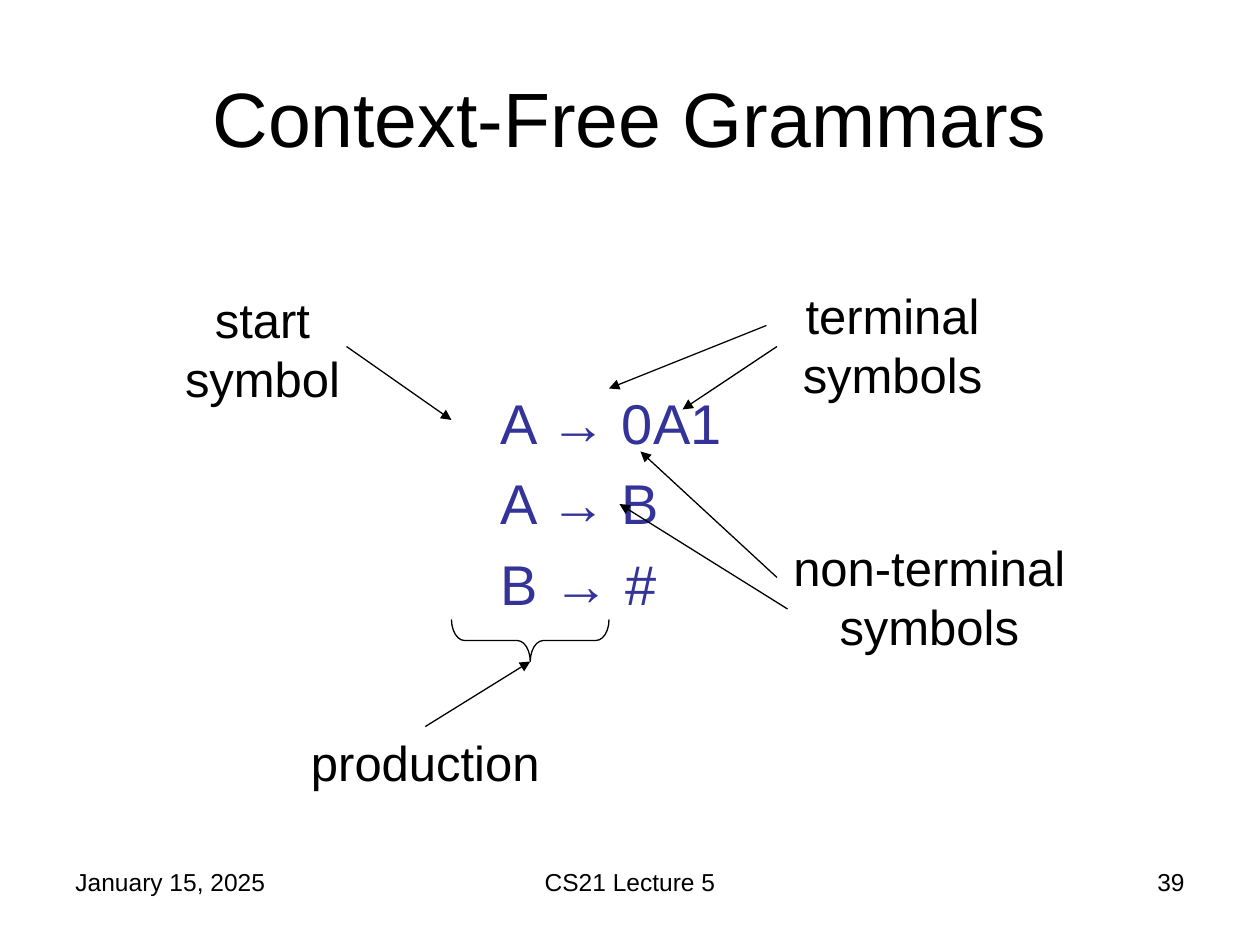
from dataclasses import dataclass

from lxml.etree import SubElement
from pptx import Presentation
from pptx.dml.color import RGBColor
from pptx.enum.shapes import MSO_CONNECTOR, MSO_SHAPE
from pptx.enum.text import MSO_ANCHOR, PP_ALIGN
from pptx.oxml.ns import qn
from pptx.util import Inches, Pt


@dataclass(frozen=True)
class Theme:
    """Colours, type sizes and line width of the slide."""
    font: str = "Arial"
    ink: str = "000000"
    rule: str = "333399"
    title: int = 44
    body: int = 32
    label: int = 28
    foot: int = 14
    line: float = 0.75


THEME = Theme()
WIDTH, HEIGHT = 10, 7.5
CELL = WIDTH / 120
LEFT, MID, RIGHT = PP_ALIGN.LEFT, PP_ALIGN.CENTER, PP_ALIGN.RIGHT

FOOTER = [
    ("January 15, 2025", 6, 28, LEFT),
    ("CS21 Lecture 5", 41, 38, MID),
    ("39", 86, 28, RIGHT),
]
LABELS = [
    ("start symbol", (15, 27, 20, 12.4)),
    ("terminal symbols", (75, 26.6, 20, 12.4)),
    ("non-terminal symbols", (73, 50.6, 31, 12.4)),
    ("production", (25, 69.2, 31, 6.8)),
]
ARROWS = [
    ((33, 33), (43, 40)),
    ((73, 31), (58, 37)),
    ((74, 33), (65, 39)),
    ((75, 58), (59, 48)),
    ((74, 55), (61, 43)),
    ((40.5, 69.2), (50.5, 63)),
]


def grid(*cells):
    """Turn grid columns and rows into slide lengths."""
    return [Inches(cell * CELL) for cell in cells]


def write(slide, lines, box, size, color=THEME.ink, align=MID,
          anchor=MSO_ANCHOR.TOP, before=0):
    """Add a text box with one paragraph per line."""
    frame = slide.shapes.add_textbox(*grid(*box)).text_frame
    frame.word_wrap = True
    frame.vertical_anchor = anchor
    for index, line in enumerate(lines):
        para = frame.paragraphs[0] if index == 0 else frame.add_paragraph()
        para.alignment = align
        para.space_before = Pt(before)
        run = para.add_run()
        run.text = line
        run.font.name = THEME.font
        run.font.size = Pt(size)
        run.font.color.rgb = RGBColor.from_string(color)


def stroke(shape):
    """Give a shape or connector the thin ink line."""
    shape.line.color.rgb = RGBColor.from_string(THEME.ink)
    shape.line.width = Pt(THEME.line)


def arrow(slide, start, end):
    """Draw a line with a triangle head at its end."""
    link = slide.shapes.add_connector(MSO_CONNECTOR.STRAIGHT, *grid(*start, *end))
    stroke(link)
    SubElement(link.line._get_or_add_ln(), qn("a:tailEnd"), type="triangle")
    SubElement(link._element.spPr, qn("a:effectLst"))


def brace(slide, box):
    """Draw a left brace turned to open upwards."""
    shape = slide.shapes.add_shape(MSO_SHAPE.LEFT_BRACE, *grid(*box))
    shape.rotation = 270
    shape.adjustments[0] = 0.31
    shape.shadow.inherit = False
    shape.fill.background()
    stroke(shape)


def main():
    """Build and save the slide."""
    deck = Presentation()
    deck.slide_width, deck.slide_height = Inches(WIDTH), Inches(HEIGHT)
    slide = deck.slides.add_slide(deck.slide_layouts[6])
    for text, left, width, align in FOOTER:
        write(slide, [text], (left, 82, width, 6.25), THEME.foot, align=align)
    write(slide, ["Context-Free Grammars"], (6, 3.6, 108, 15), THEME.title,
          anchor=MSO_ANCHOR.MIDDLE)
    write(slide, ["A → 0A1", "A → B", "B → #"], (46.5, 36.4, 50, 23),
          THEME.body, color=THEME.rule, align=LEFT, before=7.5)
    for text, box in LABELS:
        write(slide, [text], box, THEME.label)
    for start, end in ARROWS:
        arrow(slide, start, end)
    brace(slide, (48.5, 53.5, 4, 15))
    deck.save("out.pptx")


if __name__ == "__main__":
    main()
